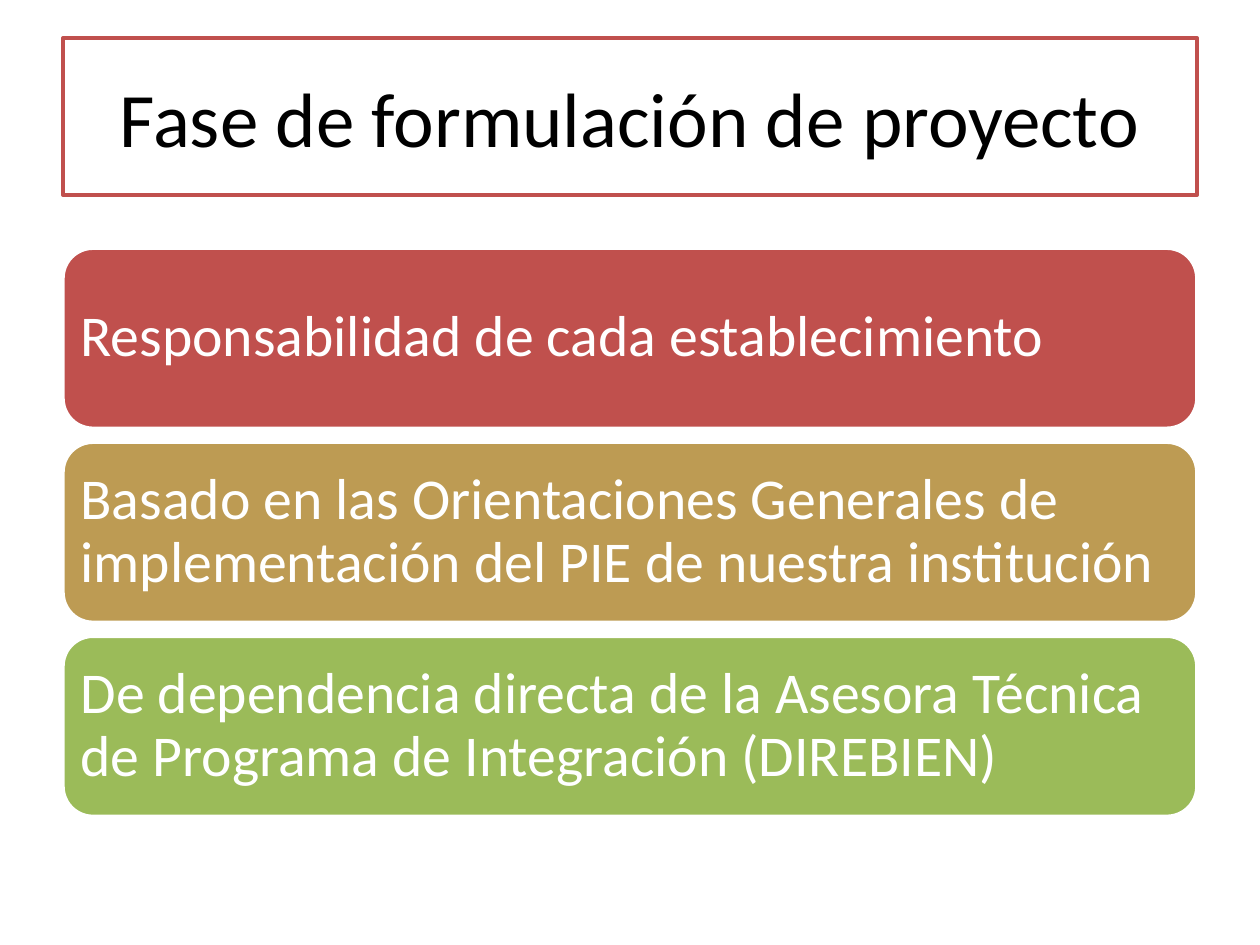
"""Build the project formulation slide: a framed title over three stacked bands."""
from dataclasses import dataclass

from pptx import Presentation
from pptx import util as u
from pptx.dml.color import RGBColor
from pptx.enum import shapes, text


@dataclass(frozen=True)
class Theme:
    font: str = "Calibri"
    title_size: int = 44
    band_size: int = 33
    outline: float = 2
    white: str = "FFFFFF"
    black: str = "000000"
    red: str = "C0504D"
    ochre: str = "BD9B53"
    green: str = "9BBB59"


@dataclass(frozen=True)
class Grid:
    left: float = 0.5
    width: float = 9
    title_top: float = 0.3
    title_height: float = 1.25
    first_band: float = 1.97
    band_height: float = 1.43
    band_pitch: float = 1.54
    inset: float = 0.07


@dataclass(frozen=True)
class Band:
    wording: str
    color: str


THEME = Theme()
GRID = Grid()
BANDS = (
    Band("Responsabilidad de cada establecimiento", THEME.red),
    Band("Basado en las Orientaciones Generales de implementación del PIE "
         "de nuestra institución", THEME.ochre),
    Band("De dependencia directa de la Asesora Técnica de Programa de "
         "Integración (DIREBIEN)", THEME.green),
)


def paint(shape, fill: str, line: str) -> None:
    """Give a shape its fill and outline."""
    shape.fill.solid()
    shape.fill.fore_color.rgb = RGBColor.from_string(fill)
    shape.line.color.rgb = RGBColor.from_string(line)
    shape.line.width = u.Pt(THEME.outline)


def write(shape, wording: str, size: int, color: str, align) -> None:
    """Set one vertically centred paragraph in a shape."""
    frame = shape.text_frame
    frame.text = wording
    frame.word_wrap = True
    frame.auto_size = text.MSO_AUTO_SIZE.NONE
    frame.vertical_anchor = text.MSO_ANCHOR.MIDDLE
    paragraph = frame.paragraphs[0]
    paragraph.alignment = align
    font = paragraph.runs[0].font
    font.name, font.size = THEME.font, u.Pt(size)
    font.color.rgb = RGBColor.from_string(color)


def draw_title(slide, wording: str) -> None:
    """Place and frame the title placeholder."""
    title = slide.shapes.title
    title.left, title.top = u.Inches(GRID.left), u.Inches(GRID.title_top)
    title.width, title.height = u.Inches(GRID.width), u.Inches(GRID.title_height)
    paint(title, THEME.white, THEME.red)
    write(title, wording, THEME.title_size, THEME.black, text.PP_ALIGN.CENTER)


def draw_band(slide, row: int, band: Band) -> None:
    """Draw one rounded band on its row of the stack."""
    top = GRID.first_band + row * GRID.band_pitch
    shape = slide.shapes.add_shape(
        shapes.MSO_SHAPE.ROUNDED_RECTANGLE, u.Inches(GRID.left), u.Inches(top),
        u.Inches(GRID.width), u.Inches(GRID.band_height))
    shape.shadow.inherit = False
    paint(shape, band.color, THEME.white)
    write(shape, band.wording, THEME.band_size, THEME.white, text.PP_ALIGN.LEFT)
    frame = shape.text_frame
    frame.margin_left = frame.margin_right = u.Inches(GRID.inset)
    frame.margin_top = frame.margin_bottom = u.Inches(GRID.inset)
    frame.paragraphs[0].line_spacing = 0.9


def main() -> None:
    """Assemble and save the slide."""
    deck = Presentation()
    deck.slide_width, deck.slide_height = u.Inches(10), u.Inches(7.5)
    slide = deck.slides.add_slide(deck.slide_layouts.get_by_name("Title Only"))
    draw_title(slide, "Fase de formulación de proyecto")
    for row, band in enumerate(BANDS):
        draw_band(slide, row, band)
    deck.save("out.pptx")


if __name__ == "__main__":
    main()
